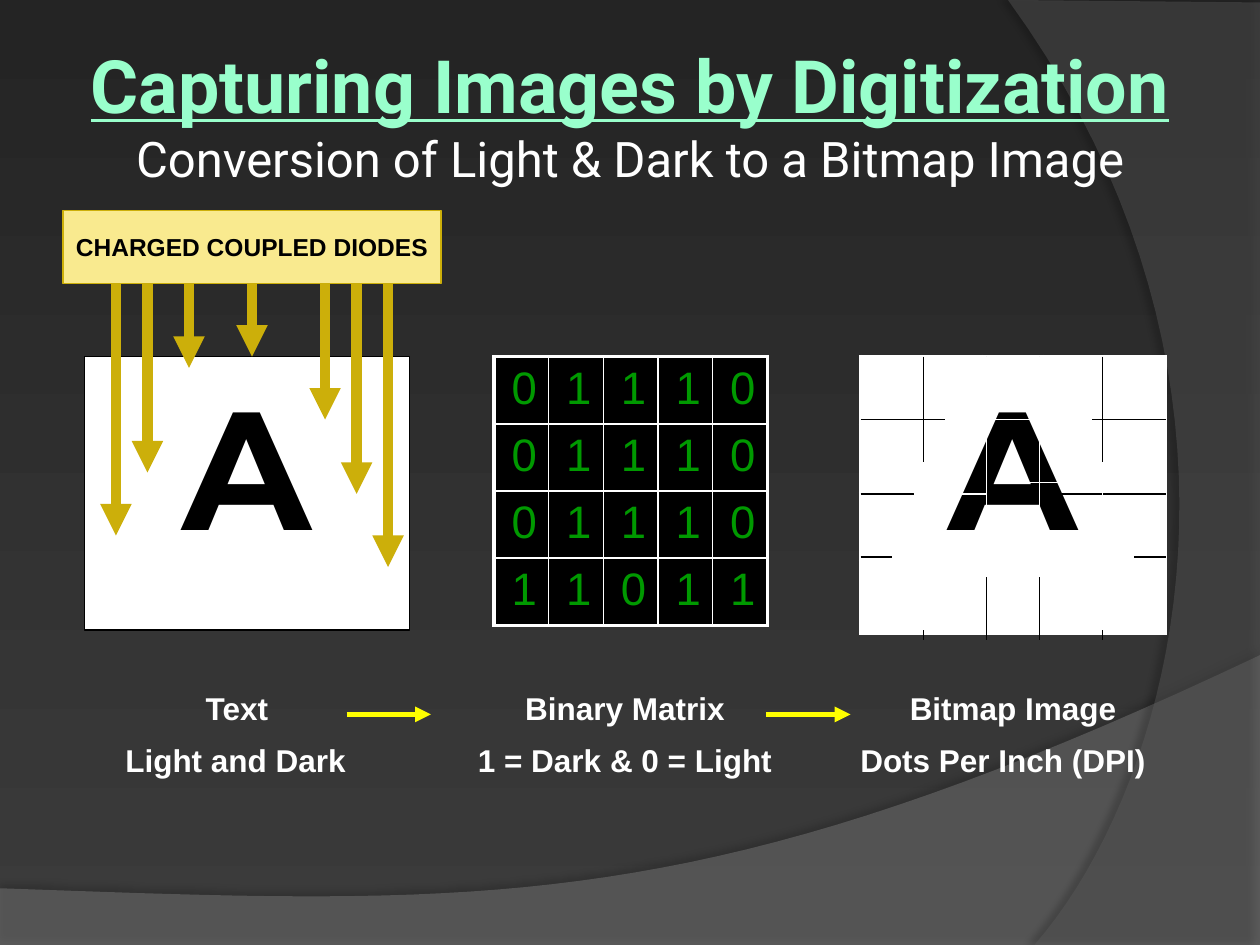
from lxml.etree import SubElement
from pptx import Presentation
from pptx.dml.color import RGBColor
from pptx.enum.shapes import MSO_CONNECTOR, MSO_SHAPE
from pptx.enum.text import MSO_ANCHOR, MSO_AUTO_SIZE, PP_ALIGN
from pptx.oxml import parse_xml
from pptx.oxml.ns import nsdecls, qn
from pptx.util import Inches, Pt

WHITE, BLACK, GOLD, YELLOW = "FFFFFF", "000000", "CCAF0A", "FFFF00"


def color(hex_string):
    return RGBColor.from_string(hex_string)


def bezier(start, control_1, control_2, end, steps=40):
    """Points along a cubic curve, without its start."""
    points = []
    for step in range(1, steps + 1):
        t = step / steps
        weights = ((1 - t) ** 3, 3 * t * (1 - t) ** 2, 3 * t * t * (1 - t), t ** 3)
        corners = (start, control_1, control_2, end)
        points.append(tuple(sum(w * c[axis] for w, c in zip(weights, corners))
                            for axis in (0, 1)))
    return points


class SlideBuilder:
    font = "Arial"
    thin, thick = 1, 2.25

    def __init__(self, slide):
        self.slide = slide
        self.shapes = slide.shapes

    def background(self, top, bottom):
        fill = self.slide.background.fill
        fill.gradient()
        fill.gradient_angle = 270
        for stop, hex_string in zip(fill.gradient_stops, (top, bottom)):
            stop.color.rgb = color(hex_string)

    def wave(self, points, fill, opacity, shadow_opacity, distance, direction):
        points = [(Inches(x), Inches(y)) for x, y in points]
        builder = self.shapes.build_freeform(*points[0])
        builder.add_line_segments(points[1:])
        shape = builder.convert_to_shape()
        shape.line.fill.background()
        shape.fill.solid()
        shape.fill.fore_color.rgb = color(fill)
        fill_color = shape._element.spPr.find(qn("a:solidFill"))[0]
        SubElement(fill_color, qn("a:alpha"), val=str(opacity * 1000))
        shape.shadow.inherit = False
        effects = shape._element.spPr.find(qn("a:effectLst"))
        shadow = SubElement(effects, qn("a:outerShdw"), blurRad=str(Pt(4)),
                            dist=str(Pt(distance)), dir=str(direction * 60000))
        shadow_color = SubElement(shadow, qn("a:srgbClr"), val=BLACK)
        SubElement(shadow_color, qn("a:alpha"), val=str(shadow_opacity * 1000))

    def style_text(self, paragraph, text, size, text_color, bold=False, font=None,
                   underline=False, align=PP_ALIGN.CENTER):
        paragraph.text = text
        paragraph.alignment = align
        for run in paragraph.runs:
            run.font.name = font or self.font
            run.font.size = Pt(size)
            run.font.bold = bold
            run.font.underline = underline
            run.font.color.rgb = color(text_color)

    def text(self, box, text, size, text_color=WHITE, font=None, wrap=True):
        frame = self.shapes.add_textbox(*map(Inches, box)).text_frame
        frame.word_wrap = wrap
        if wrap:
            frame.auto_size = MSO_AUTO_SIZE.SHAPE_TO_FIT_TEXT
        self.style_text(frame.paragraphs[0], text, size, text_color, True, font)

    def title(self, box, heading, subtitle):
        frame = self.shapes.add_textbox(*map(Inches, box)).text_frame
        frame.word_wrap = True
        frame.vertical_anchor = MSO_ANCHOR.MIDDLE
        frame.margin_left = frame.margin_right = Inches(0.05)
        self.style_text(frame.paragraphs[0], heading, 42, "99FFCC", True, "Roboto", True)
        self.style_text(frame.add_paragraph(), subtitle, 28, WHITE, font="Roboto")

    def rectangle(self, box, fill, line, text=""):
        shape = self.shapes.add_shape(MSO_SHAPE.RECTANGLE, *map(Inches, box))
        shape.shadow.inherit = False
        shape.fill.solid()
        shape.fill.fore_color.rgb = color(fill)
        shape.line.color.rgb = color(line)
        shape.line.width = Pt(0.75)
        if text:
            frame = shape.text_frame
            frame.word_wrap = False
            frame.vertical_anchor = MSO_ANCHOR.MIDDLE
            self.style_text(frame.paragraphs[0], text, 14, BLACK, True)

    def line(self, start, end, line_color, width=0.75, arrow=False):
        connector = self.shapes.add_connector(
            MSO_CONNECTOR.STRAIGHT, *map(Inches, (*start, *end)))
        connector.line.color.rgb = color(line_color)
        connector.line.width = Pt(width)
        properties = connector._element.spPr
        if arrow:
            SubElement(properties.find(qn("a:ln")), qn("a:tailEnd"), type="triangle")
        SubElement(properties, qn("a:effectLst"))

    def grid(self, box, rows, heights, fill, text_color=BLACK):
        row_count, column_count = len(rows), len(rows[0])
        table = self.shapes.add_table(row_count, column_count, *map(Inches, box)).table
        table.first_row = table.horz_banding = False
        for column in table.columns:
            column.width = Inches(box[2] / column_count)
        for r, (values, height) in enumerate(zip(rows, heights)):
            table.rows[r].height = Inches(height)
            for c, value in enumerate(values):
                cell = table.cell(r, c)
                cell.fill.solid()
                cell.fill.fore_color.rgb = color(fill)
                cell.margin_left = Inches(0.14)
                if value:
                    self.style_text(cell.text_frame.paragraphs[0], value, 26, text_color,
                                    align=PP_ALIGN.LEFT)
                outer = {"L": c == 0, "R": c == column_count - 1,
                         "T": r == 0, "B": r == row_count - 1}
                self.borders(cell, outer)

    def borders(self, cell, outer):
        properties = cell._tc.get_or_add_tcPr()
        for index, (side, is_outer) in enumerate(outer.items()):
            width = Pt(self.thick if is_outer else self.thin)
            properties.insert(index, parse_xml(
                f'<a:ln{side} {nsdecls("a")} w="{width}"><a:solidFill>'
                f'<a:srgbClr val="{WHITE}"/></a:solidFill></a:ln{side}>'))


def main():
    presentation = Presentation()
    presentation.slide_width, presentation.slide_height = Inches(10), Inches(7.5)
    builder = SlideBuilder(presentation.slides.add_slide(presentation.slide_layouts[6]))

    # Background and waves
    builder.background("242424", "3B3B3B")
    builder.wave([(0, 7.05), (0, 7.5), (10, 7.5), (10, 5.2),
                  *bezier((10, 5.2), (5.59, 7.29), (3.91, 7.19), (0, 7.05))],
                 "7F7F7F", 45, 35, 3.5, 270)
    builder.wave([(10, 0.02), (10, 7.5), (8.21, 7.5),
                  *bezier((8.21, 7.5), (9.35, 6.19), (10.18, 3), (8, 0))],
                 "5E5E5E", 40, 45, 4, 180)

    builder.title((0.5, 0.3, 9, 1.2), "Capturing Images by Digitization",
                  "Conversion of Light & Dark to a Bitmap Image")

    # Letter panels and binary matrix
    bitmap_box, letter_box = (6.83, 2.83, 2.42, 2.2), (0.67, 2.83, 2.58, 2.17)
    builder.grid(bitmap_box, [[""] * 5] * 4, (0.54, 0.54, 0.54, 0.58), WHITE)
    builder.rectangle(letter_box, WHITE, BLACK)
    for box in (bitmap_box, letter_box):
        builder.text(box, "A", 96, BLACK, "Montserrat", wrap=False)
    builder.grid((3.92, 2.83, 2.17, 2.1), ["01110", "01110", "01110", "11011"],
                 (0.51, 0.53, 0.53, 0.53), BLACK, "009900")

    # Captions: left, top, width
    for left, top, width, caption in (
            (1.17, 5.42, 1.42, "Text"),
            (3.67, 5.42, 2.58, "Binary Matrix"),
            (6.75, 5.42, 2.58, "Bitmap Image"),
            (0.58, 5.83, 2.58, "Light and Dark"),
            (3.5, 5.83, 2.92, "1 = Dark & 0 = Light"),
            (6.5, 5.83, 2.92, "Dots Per Inch (DPI)")):
        builder.text((left, top, width, 0.4), caption, 18)

    # Bitmap grid lines, then the white stretches over them
    for y in (3.33, 3.92, 4.42):
        builder.line((6.83, y), (9.25, y), BLACK)
    for x in (8.75, 8.25, 7.83, 7.33):
        builder.line((x, 2.83), (x, 5.08), BLACK)
    for left, right, y in ((7.5, 8.67, 3.33), (7.08, 9, 4.42),
                           (7.25, 7.83, 3.92), (8.17, 8.75, 3.83)):
        builder.line((left, y), (right, y), WHITE)
    for x, bottom, top in ((8.25, 4.58, 2.83), (8.75, 5, 3.67),
                           (7.33, 5, 3.67), (7.83, 4.58, 2.83)):
        builder.line((x, bottom), (x, top), WHITE)

    # Arrows between the steps
    for x in (2.75, 6.08):
        builder.line((x, 5.67), (x + 0.67, 5.67), YELLOW, 3, arrow=True)

    # Diode bar and its beams
    for x, tip in ((0.92, 4.25), (1.17, 3.75), (1.5, 2.92), (2, 2.83),
                   (2.58, 3.33), (2.83, 3.92), (3.08, 4.5)):
        builder.line((x, 2.08), (x, tip), GOLD, 6, arrow=True)
    builder.rectangle((0.5, 1.67, 3, 0.58), "F9EA8F", GOLD, "CHARGED COUPLED DIODES")

    presentation.save("out.pptx")


if __name__ == "__main__":
    main()
